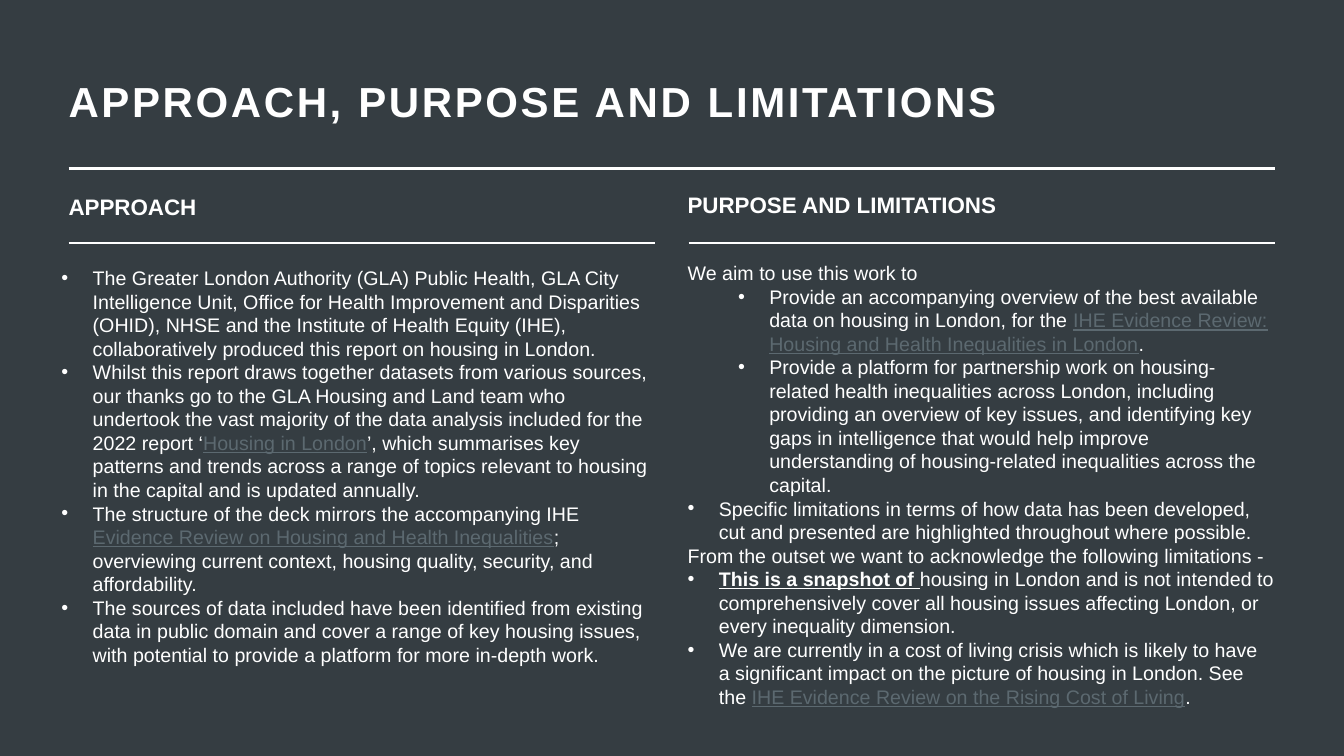
from dataclasses import dataclass, field
from typing import Any

from lxml.etree import SubElement
from pptx import Presentation
from pptx.dml.color import RGBColor
from pptx.enum.shapes import MSO_CONNECTOR
from pptx.enum.text import MSO_ANCHOR, MSO_AUTO_SIZE, PP_ALIGN
from pptx.oxml.ns import qn
from pptx.util import Inches, Pt


@dataclass(frozen=True)
class Theme:
    background: RGBColor = RGBColor(0x35, 0x3D, 0x42)
    text: RGBColor = RGBColor(0xFF, 0xFF, 0xFF)
    link: RGBColor = RGBColor(0x5C, 0x69, 0x70)
    font: str = "Arial"
    title: float = 30
    heading: float = 16
    body: float = 14
    leading: float = 1.2  # line pitch as a multiple of the type size
    hang: float = 0.31


THEME = Theme()


@dataclass(frozen=True)
class Run:
    text: str
    link: bool = False
    strong: bool = False


@dataclass(frozen=True)
class Para:
    runs: list[Run]
    indent: float | None = None  # left edge of bulleted text
    level: int = 0


@dataclass(frozen=True)
class TextBlock:
    left: float
    top: float
    width: float
    height: float
    size: float
    paras: list[Para] = field(default_factory=list)
    bold: bool = False


@dataclass(frozen=True)
class Rule:
    left: float
    right: float
    y: float
    weight: float


def bullet(*runs: Run) -> Para:
    return Para(list(runs), THEME.hang)


def sub_bullet(*runs: Run) -> Para:
    return Para(list(runs), 0.81, 1)


def plain(text: str) -> Para:
    return Para([Run(text)])


def set_attrs(target: Any, values: dict[str, Any]) -> None:
    for name, value in values.items():
        setattr(target, name, value)


def format_run(r: Any, size: float, bold: bool, link: bool = False, underline: bool = False) -> None:
    set_attrs(r.font, {"name": THEME.font, "size": Pt(size), "bold": bold, "underline": underline})
    r.font.color.rgb = THEME.link if link else THEME.text


def add_bullet(p: Any, indent: float) -> None:
    pPr = p._p.get_or_add_pPr()
    pPr.set("marL", str(Inches(indent)))
    pPr.set("indent", str(-Inches(THEME.hang)))
    color = SubElement(SubElement(pPr, qn("a:buClr")), qn("a:srgbClr"))
    color.set("val", str(THEME.text))
    SubElement(pPr, qn("a:buFont")).set("typeface", THEME.font)
    SubElement(pPr, qn("a:buChar")).set("char", "•")


def add_text(s: Any, block: TextBlock) -> None:
    box = (block.left, block.top, block.width, block.height)
    tf = s.shapes.add_textbox(*map(Inches, box)).text_frame
    set_attrs(tf, {"word_wrap": True, "margin_left": 0, "margin_right": 0,
                   "margin_top": 0, "margin_bottom": 0})
    for i, para in enumerate(block.paras):
        p = tf.add_paragraph() if i else tf.paragraphs[0]
        set_attrs(p, {"level": para.level, "line_spacing": Pt(block.size * THEME.leading)})
        if para.indent is not None:
            add_bullet(p, para.indent)
        for run in para.runs:
            r = p.add_run()
            r.text = run.text
            format_run(r, block.size, block.bold or run.strong, run.link, run.link or run.strong)


def add_rule(s: Any, rule: Rule) -> None:
    y = Inches(rule.y)
    line = s.shapes.add_connector(MSO_CONNECTOR.STRAIGHT, Inches(rule.left), y, Inches(rule.right), y)
    line.line.color.rgb = THEME.text
    line.line.width = Pt(rule.weight)
    SubElement(line._element.spPr, qn("a:effectLst"))


def set_title(s: Any, text: str) -> None:
    sp = s.shapes.title
    set_attrs(sp, {"left": Inches(0.68), "top": Inches(0.75),
                   "width": Inches(11.76), "height": Inches(0.56)})
    tf = sp.text_frame
    set_attrs(tf, {"word_wrap": True, "auto_size": MSO_AUTO_SIZE.NONE, "margin_left": 0,
                   "vertical_anchor": MSO_ANCHOR.MIDDLE})
    p = tf.paragraphs[0]
    set_attrs(p, {"alignment": PP_ALIGN.LEFT, "line_spacing": 0.9})
    r = p.add_run()
    r.text = text
    format_run(r, THEME.title, True)
    r.font._element.set("spc", "190")


RULES = [Rule(0.68, 12.65, 1.67, 2), Rule(0.68, 6.5, 2.41, 1), Rule(6.83, 12.65, 2.41, 1)]

HEADINGS = [
    TextBlock(0.68, 1.92, 5.82, 0.39, THEME.heading, [plain("APPROACH")], True),
    TextBlock(6.82, 1.9, 5.83, 0.39, THEME.heading, [plain("PURPOSE AND LIMITATIONS")], True),
]

APPROACH = TextBlock(0.61, 2.64, 5.82, 3.44, THEME.body, [
    bullet(Run("The Greater London Authority (GLA) Public Health, GLA City Intelligence Unit, Office for "
               "Health Improvement and Disparities (OHID), NHSE and the Institute of Health Equity (IHE), "
               "collaboratively produced this report on housing in London.")),
    bullet(Run("Whilst this report draws together datasets from various sources, our thanks go to the GLA "
               "Housing and Land team who undertook the vast majority of the data analysis included for "
               "the 2022 report ‘"),
           Run("Housing in London", link=True),
           Run("’, which summarises key patterns and trends across a range of topics relevant to housing "
               "in the capital and is updated annually.")),
    bullet(Run("The structure of the deck mirrors the accompanying IHE "),
           Run("Evidence Review on Housing and Health Inequalities", link=True),
           Run("; overviewing current context, housing quality, security, and affordability.")),
    bullet(Run("The sources of data included have been identified from existing data in public domain and "
               "cover a range of key housing issues, with potential to provide a platform for more "
               "in-depth work.")),
])

PURPOSE = TextBlock(6.82, 2.59, 5.82, 3.29, THEME.body, [
    plain("We aim to use this work to"),
    sub_bullet(Run("Provide an accompanying overview of the best available data on housing in London, "
                   "for the "),
               Run("IHE Evidence Review: Housing and Health Inequalities in London", link=True),
               Run(".")),
    sub_bullet(Run("Provide a platform for partnership work on housing-related health inequalities across "
                   "London, including providing an overview of key issues, and identifying key gaps in "
                   "intelligence that would help improve understanding of housing-related inequalities "
                   "across the capital.")),
    bullet(Run("Specific limitations in terms of how data has been developed, cut and presented are "
               "highlighted throughout where possible.")),
    plain("From the outset we want to acknowledge the following limitations -"),
    bullet(Run("This is a snapshot of ", strong=True),
           Run("housing in London and is not intended to comprehensively cover all housing issues "
               "affecting London, or every inequality dimension.")),
    bullet(Run("We are currently in a cost of living crisis which is likely to have a significant impact "
               "on the picture of housing in London. See the "),
           Run("IHE Evidence Review on the Rising Cost of Living", link=True),
           Run(".")),
])


def main() -> None:
    prs = Presentation()
    set_attrs(prs, {"slide_width": Inches(13.33), "slide_height": Inches(7.5)})
    s = prs.slides.add_slide(prs.slide_layouts[5])
    s.background.fill.solid()
    s.background.fill.fore_color.rgb = THEME.background

    # Title and dividing lines
    set_title(s, "APPROACH, PURPOSE AND LIMITATIONS")
    for rule in RULES:
        add_rule(s, rule)

    # Column headings and text
    for block in [*HEADINGS, PURPOSE, APPROACH]:
        add_text(s, block)

    prs.save("out.pptx")


if __name__ == "__main__":
    main()
